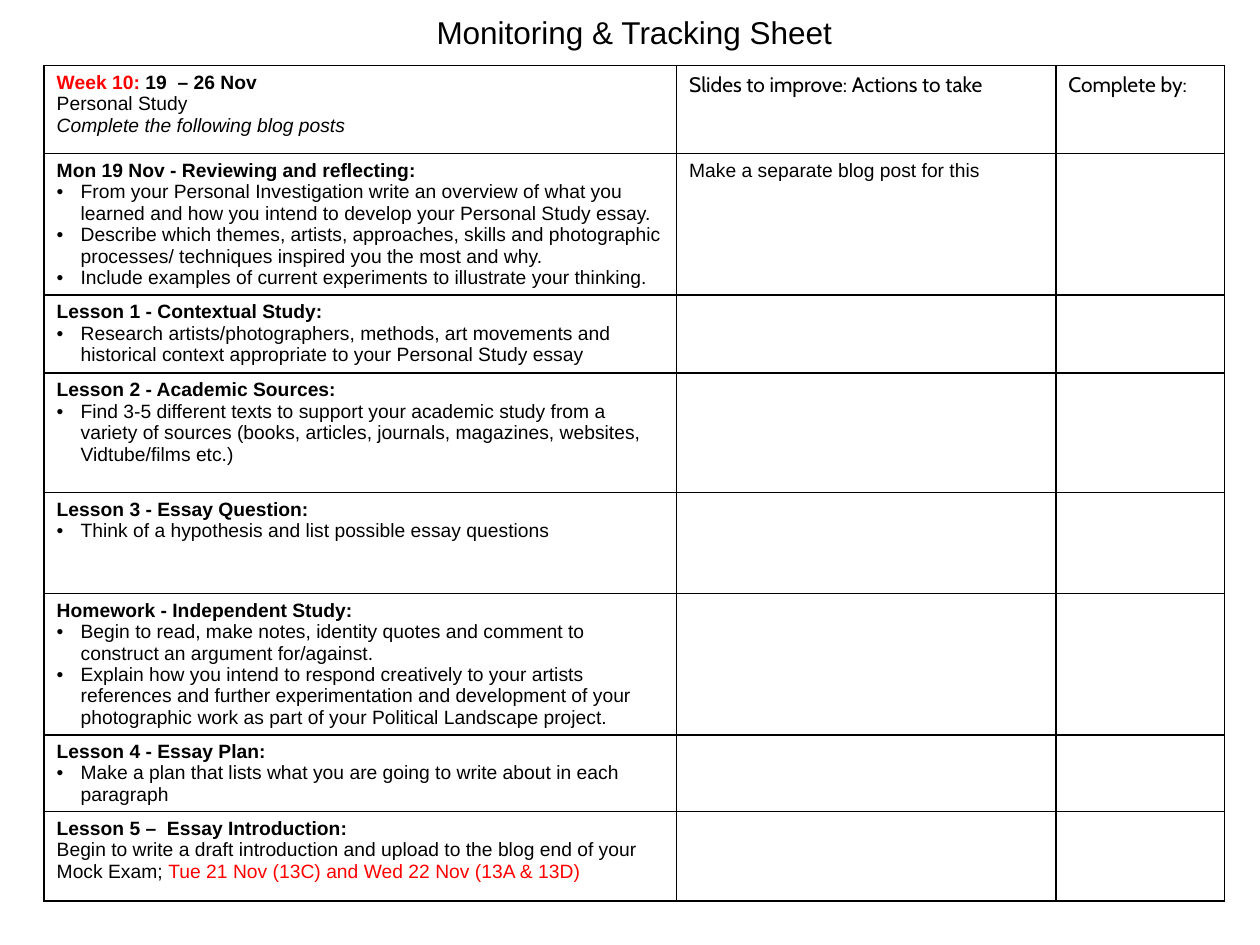
from pptx import Presentation
from pptx.dml.color import RGBColor
from pptx.enum.text import MSO_ANCHOR, PP_ALIGN
from pptx.oxml.xmlchemy import OxmlElement as new_element
from pptx.util import Inches, Pt

BLACK = RGBColor(0x00, 0x00, 0x00)
RED = RGBColor(0xFF, 0x00, 0x00)

# Run formats
PLAIN = {"size": Pt(11), "name": "Arial", "bold": False, "italic": False}
BOLD = PLAIN | {"bold": True}
ITALIC = PLAIN | {"italic": True}
HEADER = PLAIN | {"size": Pt(12), "name": "Cabin"}
TITLE = PLAIN | {"size": Pt(18)}

COLUMN_WIDTHS = [5.02, 3.01, 1.34]
ROW_HEIGHTS = [0.7, 1.12, 0.62, 0.95, 0.8, 1.12, 0.61, 0.71]
INDENT = Inches(0.19)


def heading(text):
    return False, [(text, BOLD, BLACK)]


def bullet(text):
    return True, [(text, PLAIN, BLACK)]


# Each cell is a list of paragraphs: (has bullet, [(text, format, colour), ...])
WEEK = [
    (False, [("Week 10:", BOLD, RED), (" 19  – 26 Nov", BOLD, BLACK)]),
    (False, [("Personal Study\v", PLAIN, BLACK),
             ("Complete the following blog posts", ITALIC, BLACK)]),
]
ROWS = [
    [WEEK,
     [(False, [("Slides to improve: Actions to take", HEADER, BLACK)])],
     [(False, [("Complete by:", HEADER, BLACK)])]],
    [[heading("Mon 19 Nov - Reviewing and reflecting:"),
      bullet("From your Personal Investigation write an overview of what you "
             "learned and how you intend to develop your Personal Study essay."),
      bullet("Describe which themes, artists, approaches, skills and photographic "
             "processes/ techniques inspired you the most and why."),
      bullet("Include examples of current experiments to illustrate your thinking.")],
     [(False, [("Make a separate blog post for this", PLAIN, BLACK)])]],
    [[heading("Lesson 1 - Contextual Study:"),
      bullet("Research artists/photographers, methods, art movements and "
             "historical context appropriate to your Personal Study essay")]],
    [[heading("Lesson 2 - Academic Sources:"),
      bullet("Find 3-5 different texts to support your academic study from a "
             "variety of sources (books, articles, journals, magazines, websites, "
             "Vidtube/films etc.)")]],
    [[heading("Lesson 3 - Essay Question:"),
      bullet("Think of a hypothesis and list possible essay questions")]],
    [[heading("Homework - Independent Study:"),
      bullet("Begin to read, make notes, identity quotes and comment to "
             "construct an argument for/against."),
      bullet("Explain how you intend to respond creatively to your artists "
             "references and further experimentation and development of your "
             "photographic work as part of your Political Landscape project.")]],
    [[heading("Lesson 4 - Essay Plan:"),
      bullet("Make a plan that lists what you are going to write about in each paragraph")]],
    [[heading("Lesson 5 –  Essay Introduction:"),
      (False, [("Begin to write a draft introduction and upload to the blog end of your "
                "Mock Exam; ", PLAIN, BLACK),
               ("Tue 21 Nov (13C) and Wed 22 Nov (13A & 13D)", PLAIN, RED)])]],
]


def add_text(paragraph, text, format_values, color):
    """Add a run; a trailing vertical tab becomes a line break."""
    run = paragraph.add_run()
    run.text = text.rstrip("\v")
    for name, value in format_values.items():
        setattr(run.font, name, value)
    run.font.color.rgb = color
    if text.endswith("\v"):
        paragraph.add_line_break()


def add_bullet(paragraph):
    properties = paragraph._p.get_or_add_pPr()
    properties.set("marL", str(INDENT))
    properties.set("indent", str(-INDENT))
    font = new_element("a:buFont")
    font.set("typeface", "Arial")
    character = new_element("a:buChar")
    character.set("char", "•")
    properties.extend([font, character])


def add_borders(cell):
    properties = cell._tc.get_or_add_tcPr()
    for position, side in enumerate(("a:lnL", "a:lnR", "a:lnT", "a:lnB")):
        line = new_element(side)
        line.set("w", str(Pt(1)))
        fill = new_element("a:solidFill")
        color = new_element("a:srgbClr")
        color.set("val", str(BLACK))
        fill.append(color)
        line.append(fill)
        properties.insert(position, line)


def fill_cell(cell, paragraphs):
    cell.fill.background()
    add_borders(cell)
    frame = cell.text_frame
    for index, (has_bullet, runs) in enumerate(paragraphs):
        paragraph = frame.add_paragraph() if index else frame.paragraphs[0]
        if has_bullet:
            add_bullet(paragraph)
        for run in runs:
            add_text(paragraph, *run)


def place_title(slide, left, top, width, height):
    title = slide.shapes.title
    title.left, title.top, title.width, title.height = left, top, width, height
    frame = title.text_frame
    settings = {"margin_top": 0, "margin_bottom": 0, "word_wrap": True,
                "vertical_anchor": MSO_ANCHOR.MIDDLE}
    for name, value in settings.items():
        setattr(frame, name, value)
    paragraph = frame.paragraphs[0]
    paragraph.alignment = PP_ALIGN.CENTER
    add_text(paragraph, "Monitoring & Tracking Sheet", TITLE, BLACK)


def place_tracking_table(slide, left, top, width, height):
    table = slide.shapes.add_table(
        len(ROWS), len(COLUMN_WIDTHS), left, top, width, height).table
    table.first_row = table.horz_banding = False
    for column, column_width in zip(table.columns, COLUMN_WIDTHS):
        column.width = Inches(column_width)
    for row, row_height, contents in zip(table.rows, ROW_HEIGHTS, ROWS):
        row.height = Inches(row_height)
        for index, cell in enumerate(row.cells):
            fill_cell(cell, contents[index] if index < len(contents) else [])


def main():
    presentation = Presentation()
    presentation.slide_width = Inches(10)
    presentation.slide_height = Inches(7.5)
    slide = presentation.slides.add_slide(presentation.slide_layouts[5])
    left, width = Inches(0.35), Inches(sum(COLUMN_WIDTHS))
    place_title(slide, left, Inches(0.1), width, Inches(0.3))
    place_tracking_table(slide, left, Inches(0.52), width, Inches(sum(ROW_HEIGHTS)))
    presentation.save("out.pptx")


if __name__ == "__main__":
    main()
